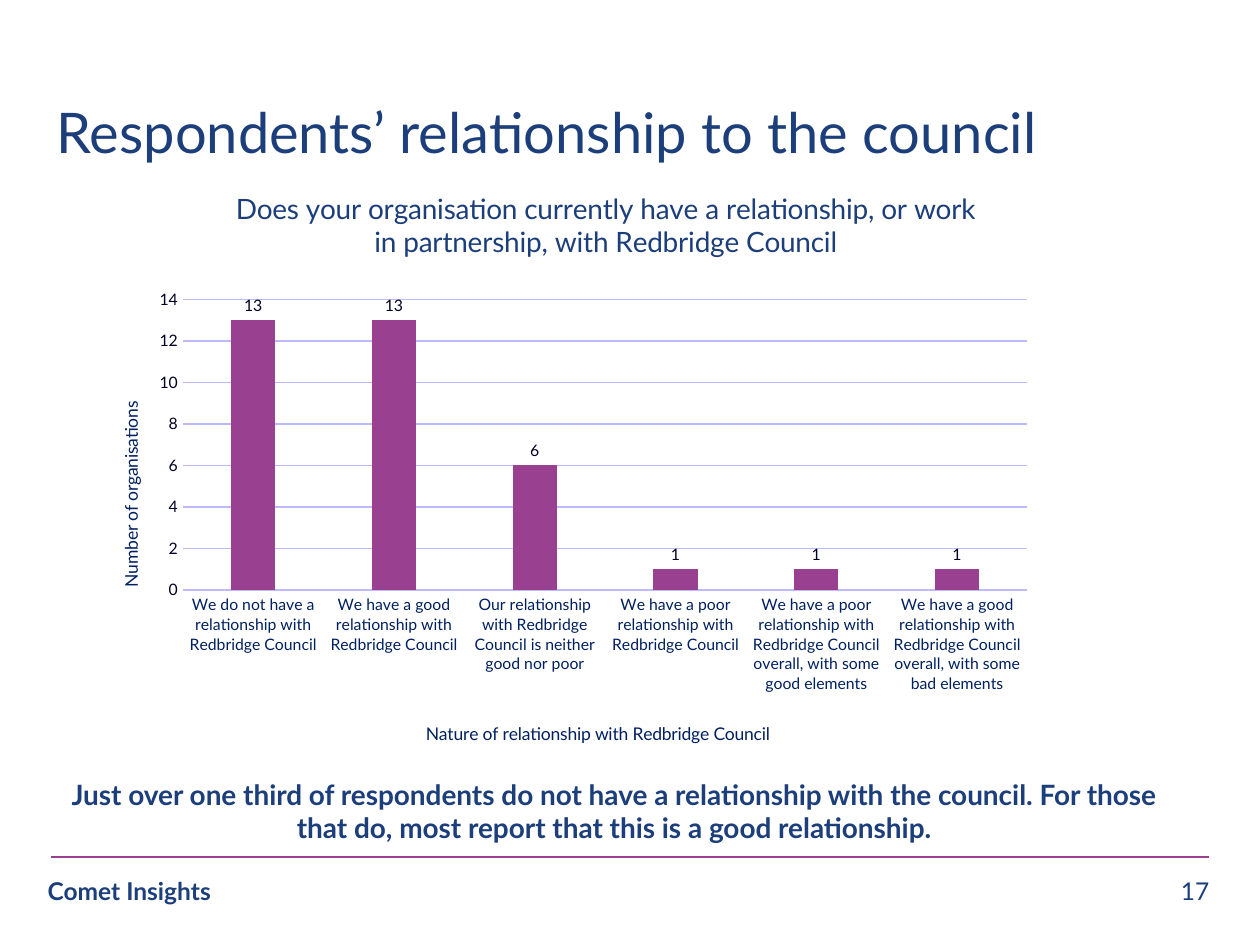
from lxml import etree
from pptx import Presentation
from pptx.chart.data import CategoryChartData
from pptx.dml.color import RGBColor
from pptx.enum.chart import XL_CHART_TYPE, XL_LABEL_POSITION, XL_TICK_MARK
from pptx.enum.shapes import MSO_CONNECTOR
from pptx.enum.text import PP_ALIGN
from pptx.oxml.ns import qn
from pptx.util import Cm, Pt

LEFT, CENTER, RIGHT = PP_ALIGN.LEFT, PP_ALIGN.CENTER, PP_ALIGN.RIGHT
COLUMNS = XL_CHART_TYPE.COLUMN_CLUSTERED
OUTSIDE_END = XL_LABEL_POSITION.OUTSIDE_END
NO_TICK = XL_TICK_MARK.NONE
STRAIGHT = MSO_CONNECTOR.STRAIGHT
FONT = "Lato"
COLORS = {"blue": "1C3E7A", "purple": "9A4091", "ink": "020122",
          "navy": "002060", "grid": "BCBAFD"}
RGB = {name: RGBColor.from_string(value) for name, value in COLORS.items()}


def style(font, size, color, bold=False):
    font.name, font.size, font.bold = FONT, Pt(size), bold
    font.color.rgb = RGB[color]


def set_layout(element, index, **fractions):
    """Give a chart part a fixed place, in fractions of the chart area."""
    for old in element.findall(qn("c:layout")):
        element.remove(old)
    layout = etree.Element(qn("c:layout"))
    manual = etree.SubElement(layout, qn("c:manualLayout"))
    settings = {"xMode": "edge", "yMode": "edge", **fractions}
    if "w" in fractions:
        settings = {"layoutTarget": "inner", **settings}
    for name, value in settings.items():
        etree.SubElement(manual, qn(f"c:{name}")).set("val", str(value))
    element.insert(index, layout)


deck = Presentation()
deck.slide_width, deck.slide_height = Cm(25.4), Cm(19.05)
page = deck.slides.add_slide(deck.slide_layouts[6])

# Footer rule
rule = page.shapes.add_connector(STRAIGHT, Cm(1.02), Cm(17.27), Cm(24.38), Cm(17.27))
rule.line.color.rgb = RGB["purple"]
rule.line.width = Pt(1)
etree.SubElement(rule._element.spPr, qn("a:effectLst"))

# Heading, takeaway and footer texts
TEXTS = [
    ("Comet Insights", (0.71, 17.53, 5.97, 0.84), 14, True, LEFT),
    ("17", (19.3, 17.53, 5.33, 0.66), 14, False, RIGHT),
    ("Respondents’ relationship to the council",
     (0.89, 1.85, 23.75, 2.29), 32, False, LEFT),
    ("Just over one third of respondents do not have a relationship with the council. "
     "For those that do, most report that this is a good relationship.",
     (0.79, 15.54, 23.19, 1.63), 16, True, CENTER),
]
for text, place, size, bold, alignment in TEXTS:
    box = page.shapes.add_textbox(*[Cm(length) for length in place])
    box.text_frame.word_wrap = True
    para = box.text_frame.paragraphs[0]
    para.text = text
    para.alignment = alignment
    style(para.runs[0].font, size, "blue", bold)

# Column chart
data = CategoryChartData()
data.categories = [
    "We do not have a relationship with Redbridge Council",
    "We have a good relationship with Redbridge Council",
    "Our relationship with Redbridge Council is neither good nor poor",
    "We have a poor relationship with Redbridge Council",
    "We have a poor relationship with Redbridge Council overall, with some good elements",
    "We have a good relationship with Redbridge Council overall, with some bad elements",
]
data.add_series("Series 1", [13, 13, 6, 1, 1, 1])
chart = page.shapes.add_chart(
    COLUMNS, Cm(1.75), Cm(3.58), Cm(19.35), Cm(11.71), data).chart
style(chart.font, 10, "ink")
chart.has_legend = False
set_layout(chart._chartSpace.chart.plotArea, 0, x=0.1, y=0.21, w=0.88, h=0.5)

# Columns and their labels
plot = chart.plots[0]
plot.vary_by_categories = False
plot.gap_width, plot.overlap = 219, -27
fill = plot.series[0].format.fill
fill.solid()
fill.fore_color.rgb = RGB["purple"]
plot.has_data_labels = True
labels = plot.data_labels
labels.show_value = True
labels.position = OUTSIDE_END
style(labels.font, 9, "ink")

# Axes
categories, values = chart.category_axis, chart.value_axis
for axis, color in ((categories, "navy"), (values, "ink")):
    axis.major_tick_mark = axis.minor_tick_mark = NO_TICK
    style(axis.tick_labels.font, 9, color)
values.minimum_scale, values.maximum_scale, values.major_unit = 0, 14, 2
values.has_major_gridlines = True
values.format.line.fill.background()
for line in (categories.format.line, values.major_gridlines.format.line):
    line.color.rgb = RGB["grid"]
    line.width = Pt(0.75)

# Chart and axis titles
TITLES = [
    (chart.chart_title, "Does your organisation currently have a relationship, "
     "or work in partnership, with Redbridge Council", 16, "blue", 0.15, 0.01),
    (categories.axis_title, "Nature of relationship with Redbridge Council",
     10, "navy", 0.35, 0.93),
    (values.axis_title, "Number of organisations", 10, "navy", 0.03, 0.38),
]
for title, text, size, color, x, y in TITLES:
    title.text_frame.text = text
    para = title.text_frame.paragraphs[0]
    style(para.font, size, color)
    style(para.runs[0].font, size, color)
    set_layout(title._element, 1, x=x, y=y)

deck.save("out.pptx")
